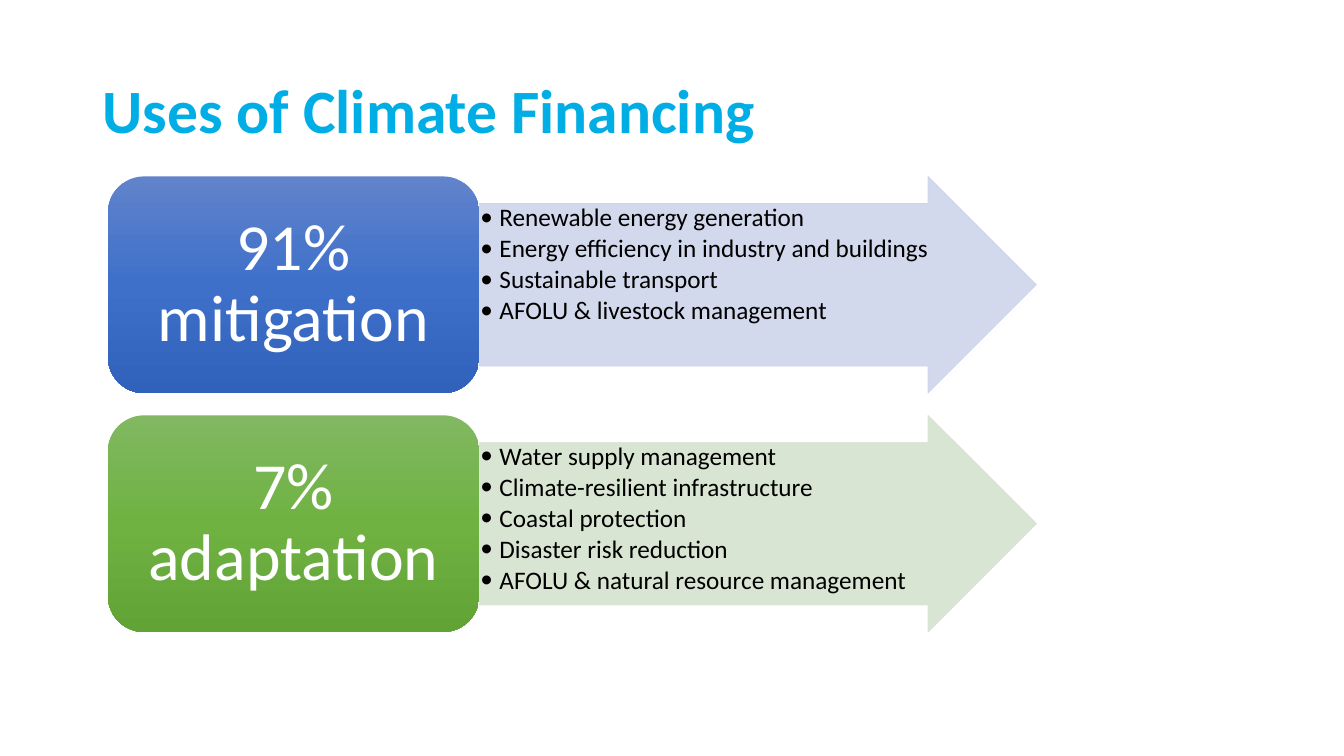
from copy import deepcopy
from lxml.etree import SubElement
from pptx import Presentation
from pptx.dml.color import RGBColor as RGB
from pptx.enum.shapes import MSO_SHAPE as SHAPE
from pptx.enum.text import MSO_ANCHOR as ANCHOR, PP_ALIGN as ALIGN
from pptx.oxml.ns import qn
from pptx.util import Inches, Pt

COLORS = {
    "title": "00ADE4", "text": "000000", "label": "FFFFFF",
    "blue": ("6183CB", "3E70CA", "3062BB"), "pale blue": "CFD5EA",
    "green": ("81B861", "6FB242", "62A336"), "pale green": "D5E3CF",
}
ROWS = [
    ("91% mitigation", "blue", [
        "Renewable energy generation",
        "Energy efficiency in industry and buildings",
        "Sustainable transport",
        "AFOLU & livestock management"]),
    ("7% adaptation", "green", [
        "Water supply management",
        "Climate-resilient infrastructure",
        "Coastal protection",
        "Disaster risk reduction",
        "AFOLU & natural resource management"]),
]


def set_frame(frame, anchor, insets):
    frame.word_wrap = True
    frame.vertical_anchor = anchor
    (frame.margin_left, frame.margin_top,
     frame.margin_right, frame.margin_bottom) = map(Inches, insets)


def add_text(para, text, size, color, align=ALIGN.LEFT, bold=False):
    para.alignment = align
    para.line_spacing = 0.9
    run = para.add_run()
    run.text = text
    font = run.font
    font.name, font.size, font.bold = "Calibri", Pt(size), bold
    font.color.rgb = RGB.from_string(COLORS[color])


def add_bullet(para):
    props = para._p.get_or_add_pPr()
    props.set("marL", str(Inches(0.19)))
    props.set("indent", str(Inches(-0.19)))
    SubElement(props, qn("a:buFont"), typeface="Calibri")
    SubElement(props, qn("a:buChar"), char="•")


def add_title(slide, left, top, width, height):
    box = slide.shapes.add_textbox(*map(Inches, (left, top, width, height)))
    set_frame(box.text_frame, ANCHOR.MIDDLE, (0.1, 0.05, 0.1, 0.05))
    add_text(box.text_frame.paragraphs[0], "Uses of Climate Financing",
             44, "title", bold=True)


def add_arrow(slide, left, top, width, height, hue, items):
    arrow = slide.shapes.add_shape(
        SHAPE.RIGHT_ARROW, *map(Inches, (left, top, width, height)))
    arrow.shadow.inherit = False
    arrow.adjustments[0], arrow.adjustments[1] = 0.75, 0.5
    pale = RGB.from_string(COLORS["pale " + hue])
    arrow.fill.solid()
    arrow.fill.fore_color.rgb = pale
    arrow.line.color.rgb = pale
    arrow.line.width = Pt(0.5)
    for color in arrow._element.spPr.iter(qn("a:srgbClr")):
        SubElement(color, qn("a:alpha"), val="90000")


def add_list(slide, left, top, width, height, items):
    box = slide.shapes.add_textbox(*map(Inches, (left, top, width, height)))
    frame = box.text_frame
    set_frame(frame, ANCHOR.TOP, (0.01, 0.01, 0.01, 0.01))
    for i, item in enumerate(items):
        para = frame.add_paragraph() if i else frame.paragraphs[0]
        add_bullet(para)
        add_text(para, item, 18, "text")
        para.space_after = Pt(2.7)


def add_label(slide, left, top, width, height, hue, text):
    label = slide.shapes.add_shape(
        SHAPE.ROUNDED_RECTANGLE, *map(Inches, (left, top, width, height)))
    label.shadow.inherit = False
    label.line.fill.background()
    label.fill.gradient()
    label.fill.gradient_angle = 270
    stops = label._element.spPr.find(".//" + qn("a:gsLst"))
    stops.append(deepcopy(stops[0]))
    for i, (stop, color) in enumerate(
            zip(label.fill.gradient_stops, COLORS[hue])):
        stop.position = i / 2
        stop.color.rgb = RGB.from_string(color)
    set_frame(label.text_frame, ANCHOR.MIDDLE, (0.2, 0.1, 0.2, 0.1))
    add_text(label.text_frame.paragraphs[0], text, 47, "label", ALIGN.CENTER)


def add_rows(slide, left, top, width, height):
    gap = 0.22
    tall = (height - gap) / len(ROWS)
    wide = width * 0.4
    for i, (text, hue, items) in enumerate(ROWS):
        x, y = left + wide, top + i * (tall + gap)
        add_arrow(slide, x, y, width - wide, tall, hue, items)
        add_list(slide, x, y + tall / 8, 4.72, tall * 0.75, items)
        add_label(slide, left, y, wide, tall, hue, text)


def main():
    deck = Presentation()
    deck.slide_width, deck.slide_height = Inches(13.33), Inches(7.5)
    slide = deck.slides.add_slide(deck.slide_layouts[6])
    add_title(slide, 0.92, 0.4, 11.5, 1.45)
    add_rows(slide, 1.07, 1.75, 9.21, 4.52)
    deck.save("out.pptx")


if __name__ == "__main__":
    main()
